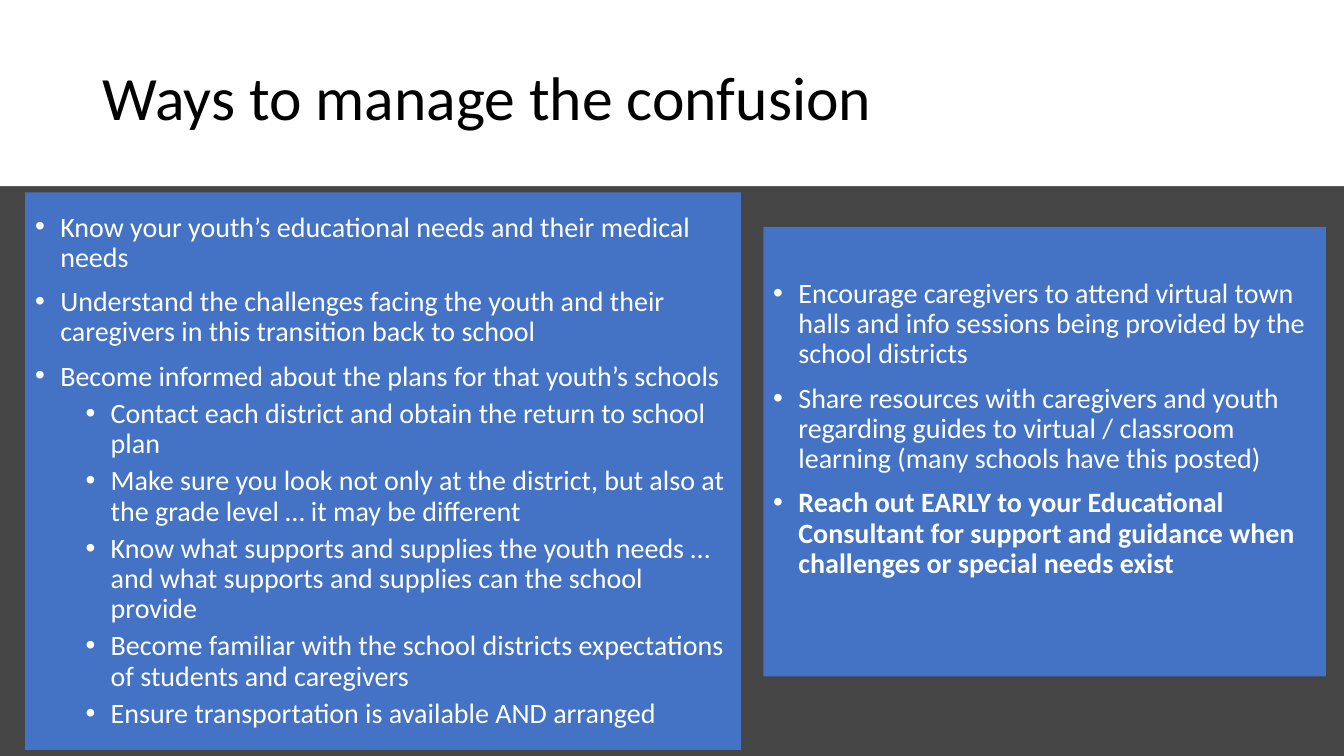
import dataclasses

import lxml.etree
import pptx
import pptx.dml.color
import pptx.enum.shapes
import pptx.enum.text
import pptx.oxml.ns
import pptx.util

Inches = pptx.util.Inches
COLORS = {"white": "FFFFFF", "dark": "454545", "blue": "4472C4", "black": "000000"}
FONT = "Calibri"
WIDTH, HEIGHT = 13.33, 7.5
BAND_HEIGHT = 1.85
SPACE_BEFORE = (10, 5)  # points, by bullet level


@dataclasses.dataclass(frozen=True)
class Bullet:
    text: str
    level: int = 0
    bold: bool = False


@dataclasses.dataclass(frozen=True)
class Panel:
    left: float
    top: float
    width: float
    height: float
    bottom_inset: float
    bullets: tuple[Bullet, ...]


PANELS = (
    Panel(0.25, 1.91, 7.1, 5.53, 0.05, (
        Bullet("Know your youth’s educational needs and their medical needs"),
        Bullet("Understand the challenges facing the youth and their caregivers "
               "in this transition back to school"),
        Bullet("Become informed about the plans for that youth’s schools"),
        Bullet("Contact each district and obtain the return to school plan", 1),
        Bullet("Make sure you look not only at the district, but also at "
               "the grade level … it may be different", 1),
        Bullet("Know what supports and supplies the youth needs … and what "
               "supports and supplies can the school provide", 1),
        Bullet("Become familiar with the school districts expectations "
               "of students and caregivers", 1),
        Bullet("Ensure transportation is available AND arranged", 1),
    )),
    Panel(7.57, 2.25, 5.58, 4.46, 0.49, (
        Bullet("Encourage caregivers to attend virtual town halls and info "
               "sessions being provided by the school districts"),
        Bullet("Share resources with caregivers and youth regarding guides to "
               "virtual / classroom learning (many schools have this posted)"),
        Bullet("Reach out EARLY to your Educational Consultant for support and "
               "guidance when challenges or special needs exist", bold=True),
    )),
)


def rgb(name: str) -> pptx.dml.color.RGBColor:
    return pptx.dml.color.RGBColor.from_string(COLORS[name])


def set_attrs(target, values: dict) -> None:
    for name, value in values.items():
        setattr(target, name, value)


def style_frame(tf, bottom_inset: float = 0.05) -> None:
    set_attrs(tf, {
        "word_wrap": True,
        "auto_size": pptx.enum.text.MSO_AUTO_SIZE.NONE,
        "vertical_anchor": pptx.enum.text.MSO_ANCHOR.MIDDLE,
        "margin_left": Inches(0.1), "margin_right": Inches(0.1),
        "margin_top": Inches(0.05), "margin_bottom": Inches(bottom_inset),
    })


def write(p, text: str, size: int, color: str, bold: bool = False,
          space_before: int = 0) -> None:
    set_attrs(p, {"alignment": pptx.enum.text.PP_ALIGN.LEFT, "line_spacing": 0.9,
                  "space_before": pptx.util.Pt(space_before)})
    r = p.add_run()
    r.text = text
    set_attrs(r.font, {"name": FONT, "size": pptx.util.Pt(size), "bold": bold})
    r.font.color.rgb = rgb(color)


def add_rect(slide, left: float, top: float, width: float, height: float, color: str):
    sp = slide.shapes.add_shape(
        pptx.enum.shapes.MSO_SHAPE.RECTANGLE,
        Inches(left), Inches(top), Inches(width), Inches(height))
    sp.shadow.inherit = False
    sp.fill.solid()
    sp.fill.fore_color.rgb = rgb(color)
    sp.line.fill.background()
    return sp


def add_bullet_mark(p, level: int) -> None:
    pPr = p._p.get_or_add_pPr()
    pPr.set("marL", str(Inches(0.25 + 0.5 * level)))
    pPr.set("indent", str(Inches(-0.25)))
    for tag, key, value in (("a:buFont", "typeface", "Arial"), ("a:buChar", "char", "•")):
        lxml.etree.SubElement(pPr, pptx.oxml.ns.qn(tag)).set(key, value)


def add_panel(slide, panel: Panel) -> None:
    sp = add_rect(slide, panel.left, panel.top, panel.width, panel.height, "blue")
    tf = sp.text_frame
    style_frame(tf, panel.bottom_inset)
    for i, bullet in enumerate(panel.bullets):
        p = tf.add_paragraph() if i else tf.paragraphs[0]
        p.level = bullet.level
        write(p, bullet.text, 20, "white", bullet.bold, SPACE_BEFORE[bullet.level])
        add_bullet_mark(p, bullet.level)


def add_title(slide, text: str) -> None:
    title = slide.shapes.title
    set_attrs(title, {"left": Inches(0.92), "top": Inches(0.4),
                      "width": Inches(11.5), "height": Inches(1.2)})
    style_frame(title.text_frame)
    write(title.text_frame.paragraphs[0], text, 44, "black")


def main() -> None:
    prs = pptx.Presentation()
    set_attrs(prs, {"slide_width": Inches(WIDTH), "slide_height": Inches(HEIGHT)})
    slide = prs.slides.add_slide(prs.slide_layouts[5])
    slide.background.fill.solid()
    slide.background.fill.fore_color.rgb = rgb("dark")

    # White title band, placed behind the title
    band = add_rect(slide, 0, 0, WIDTH, BAND_HEIGHT, "white")
    slide.shapes.title._element.addprevious(band._element)
    add_title(slide, "Ways to manage the confusion")

    # Dark lower area with the two bullet panels
    add_rect(slide, 0, BAND_HEIGHT, WIDTH, HEIGHT - BAND_HEIGHT, "dark")
    for panel in PANELS:
        add_panel(slide, panel)

    prs.save("out.pptx")


if __name__ == "__main__":
    main()
